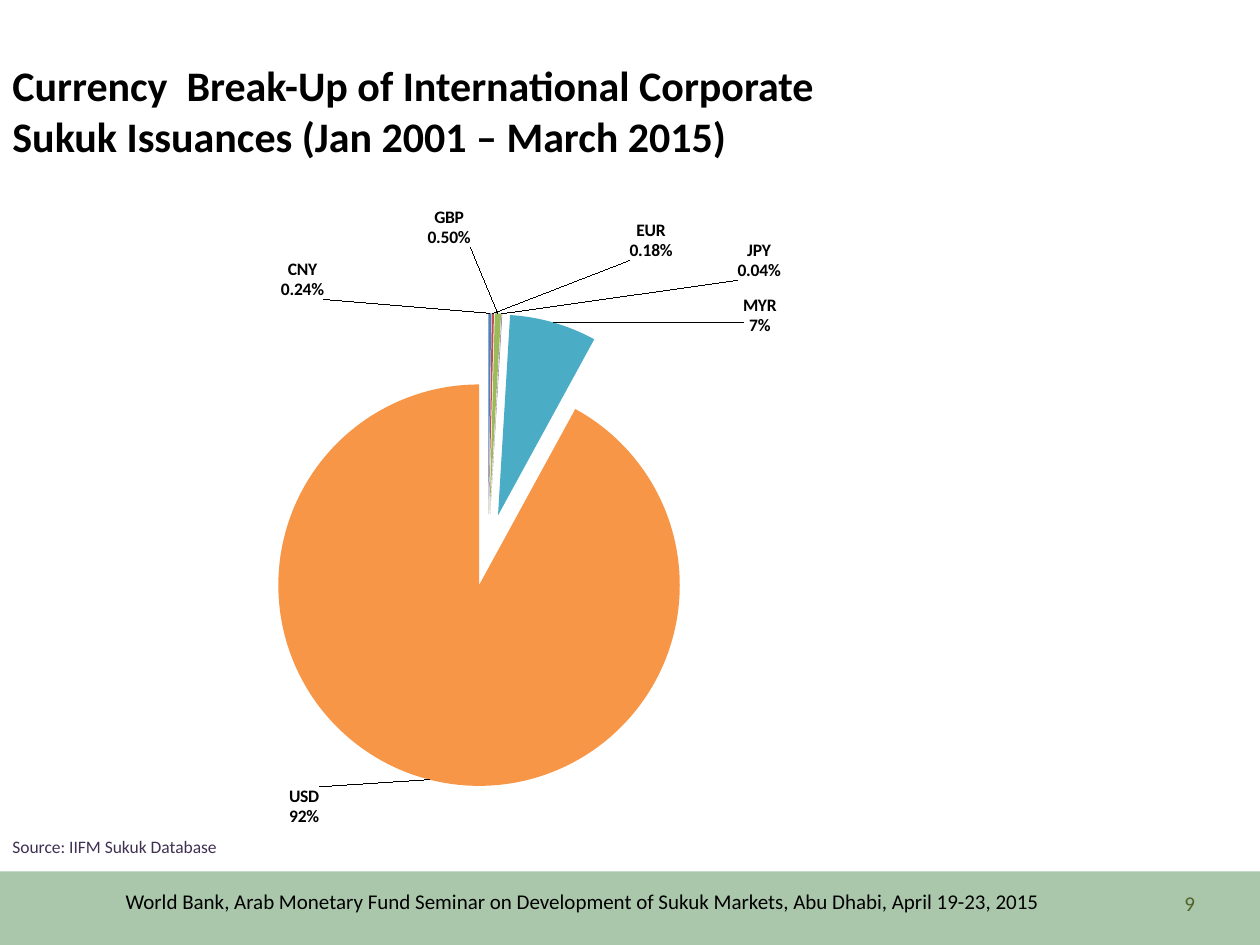
"""Build the slide on the currency mix of international corporate sukuk."""
from dataclasses import dataclass

import pptx
import pptx.chart.data
import pptx.dml.color
import pptx.enum.chart
import pptx.enum.shapes
import pptx.enum.text
import pptx.oxml
import pptx.oxml.ns
import pptx.util

Pt = pptx.util.Pt
ALIGN = pptx.enum.text.PP_ALIGN
ANCHOR = pptx.enum.text.MSO_ANCHOR


@dataclass(frozen=True)
class Theme:
    font: str = "Calibri"
    ink: str = "000000"
    band: str = "72A376"
    page: str = "4F6228"
    source: str = "403152"
    head: int = 24
    foot: int = 12
    small: int = 10


@dataclass(frozen=True)
class Label:
    text: str
    box: tuple[float, float, float, float]
    size: int
    color: str
    bold: bool = False
    align: ALIGN = ALIGN.LEFT
    anchor: ANCHOR = ANCHOR.TOP
    right: float = 7.2


@dataclass(frozen=True)
class Slice:
    name: str
    value: float
    color: str
    shift: tuple[float, float]
    form: str = "0.00%"


THEME = Theme()
LABELS = [
    Label("9", (606, 504, 84, 24), THEME.foot, THEME.page,
          align=ALIGN.RIGHT, anchor=ANCHOR.MIDDLE),
    Label("Currency  Break-Up of International Corporate Sukuk Issuances "
          "(Jan 2001 – March 2015)", (0, 24, 492, 78), THEME.head, THEME.ink,
          bold=True, anchor=ANCHOR.MIDDLE, right=3.6),
    Label("World Bank, Arab Monetary Fund Seminar on Development of Sukuk "
          "Markets, Abu Dhabi, April 19-23, 2015", (30, 504, 606, 24),
          THEME.foot, THEME.ink, align=ALIGN.CENTER),
    Label("Source: IIFM Sukuk Database", (0, 474, 252, 19.5),
          THEME.small, THEME.source),
]
SLICES = [
    Slice("CNY", 0.24, "4F81BD", (-0.19, -0.01)),
    Slice("EUR", 0.18, "C0504D", (0.16, -0.07)),
    Slice("GBP", 0.5, "9BBB59", (-0.05, -0.09)),
    Slice("JPY", 0.04, "8064A2", (0.26, -0.04)),
    Slice("MYR", 7, "4BACC6", (0.19, 0.03), "0%"),
    Slice("USD", 92, "F79646", (-0.11, 0), "0%"),
]


def rgb(code: str) -> pptx.dml.color.RGBColor:
    return pptx.dml.color.RGBColor.from_string(code)


def node(text: str):
    space = " ".join(pptx.oxml.ns.nsdecls(name) for name in ("c", "a"))
    return pptx.oxml.parse_xml(text.replace(">", f" {space}>", 1))


def draw_band(slide) -> None:
    kind = pptx.enum.shapes.MSO_SHAPE.RECTANGLE
    band = slide.shapes.add_shape(kind, Pt(0), Pt(498), Pt(720), Pt(42))
    band.shadow.inherit = False
    band.fill.solid()
    band.fill.fore_color.rgb = rgb(THEME.band)
    band.line.fill.background()
    tint = band.fill._xPr.find(".//" + pptx.oxml.ns.qn("a:srgbClr"))
    tint.append(node('<a:alpha val="60000"></a:alpha>'))


def draw_text(slide, label: Label) -> None:
    frame = slide.shapes.add_textbox(*map(Pt, label.box)).text_frame
    frame.word_wrap = True
    frame.vertical_anchor = label.anchor
    frame.margin_right = Pt(label.right)
    para = frame.paragraphs[0]
    para.text = label.text
    para.alignment = label.align
    font = para.font
    font.name, font.size, font.bold = THEME.font, Pt(label.size), label.bold
    font.color.rgb = rgb(label.color)


def make_tag(index: int, part: Slice):
    left, top = part.shift
    return node(
        f'<c:dLbl><c:idx val="{index}"/><c:layout><c:manualLayout>'
        f'<c:x val="{left}"/><c:y val="{top}"/></c:manualLayout></c:layout>'
        f'<c:numFmt formatCode="{part.form}" sourceLinked="0"/>'
        f'<c:txPr><a:bodyPr/><a:p><a:pPr><a:defRPr sz="{THEME.small * 100}" b="1"/>'
        '</a:pPr><a:endParaRPr lang="en-US"/></a:p></c:txPr>'
        '<c:dLblPos val="outEnd"/><c:showLegendKey val="0"/><c:showVal val="0"/>'
        '<c:showCatName val="1"/><c:showSerName val="0"/><c:showPercent val="1"/>'
        '<c:showBubbleSize val="0"/><c:separator>\n</c:separator></c:dLbl>')


def draw_pie(slide) -> None:
    data = pptx.chart.data.CategoryChartData()
    data.categories = [part.name for part in SLICES]
    data.add_series("Series 1", [part.value for part in SLICES])
    chart = slide.shapes.add_chart(
        pptx.enum.chart.XL_CHART_TYPE.PIE,
        Pt(42), Pt(108), Pt(564), Pt(372), data).chart
    chart.has_title = chart.has_legend = False
    chart.font.name, chart.font.size = THEME.font, Pt(THEME.small)
    chart.font.color.rgb = rgb(THEME.ink)
    plot = chart.plots[0]
    plot.vary_by_categories = True
    series = plot.series[0]
    for index, part in enumerate(SLICES):
        fill = series.points[index].format.fill
        fill.solid()
        fill.fore_color.rgb = rgb(part.color)
    tags = series.data_labels
    tags.show_value = False
    tags.show_category_name = tags.show_percentage = True
    tags.number_format, tags.number_format_is_linked = "0.00%", False
    tags.font.bold = True
    tags.position = pptx.enum.chart.XL_LABEL_POSITION.OUTSIDE_END
    for index, part in enumerate(SLICES):
        tags._element.insert(index, make_tag(index, part))
    qn = pptx.oxml.ns.qn
    series._element.find(qn("c:tx")).addnext(
        node('<c:explosion val="18"></c:explosion>'))
    area = chart._chartSpace.find(".//" + qn("c:plotArea"))
    for old in area.findall(qn("c:layout")):
        area.remove(old)
    area.insert(0, node(
        '<c:layout><c:manualLayout><c:layoutTarget val="inner"/>'
        '<c:xMode val="edge"/><c:yMode val="edge"/><c:x val="0.18"/>'
        '<c:y val="0.19"/><c:w val="0.48"/><c:h val="0.73"/>'
        '</c:manualLayout></c:layout>'))


def main() -> None:
    deck = pptx.Presentation()
    deck.slide_width, deck.slide_height = Pt(720), Pt(540)
    slide = deck.slides.add_slide(deck.slide_layouts[6])
    draw_band(slide)
    draw_pie(slide)
    for label in LABELS:
        draw_text(slide, label)
    deck.save("out.pptx")


if __name__ == "__main__":
    main()
